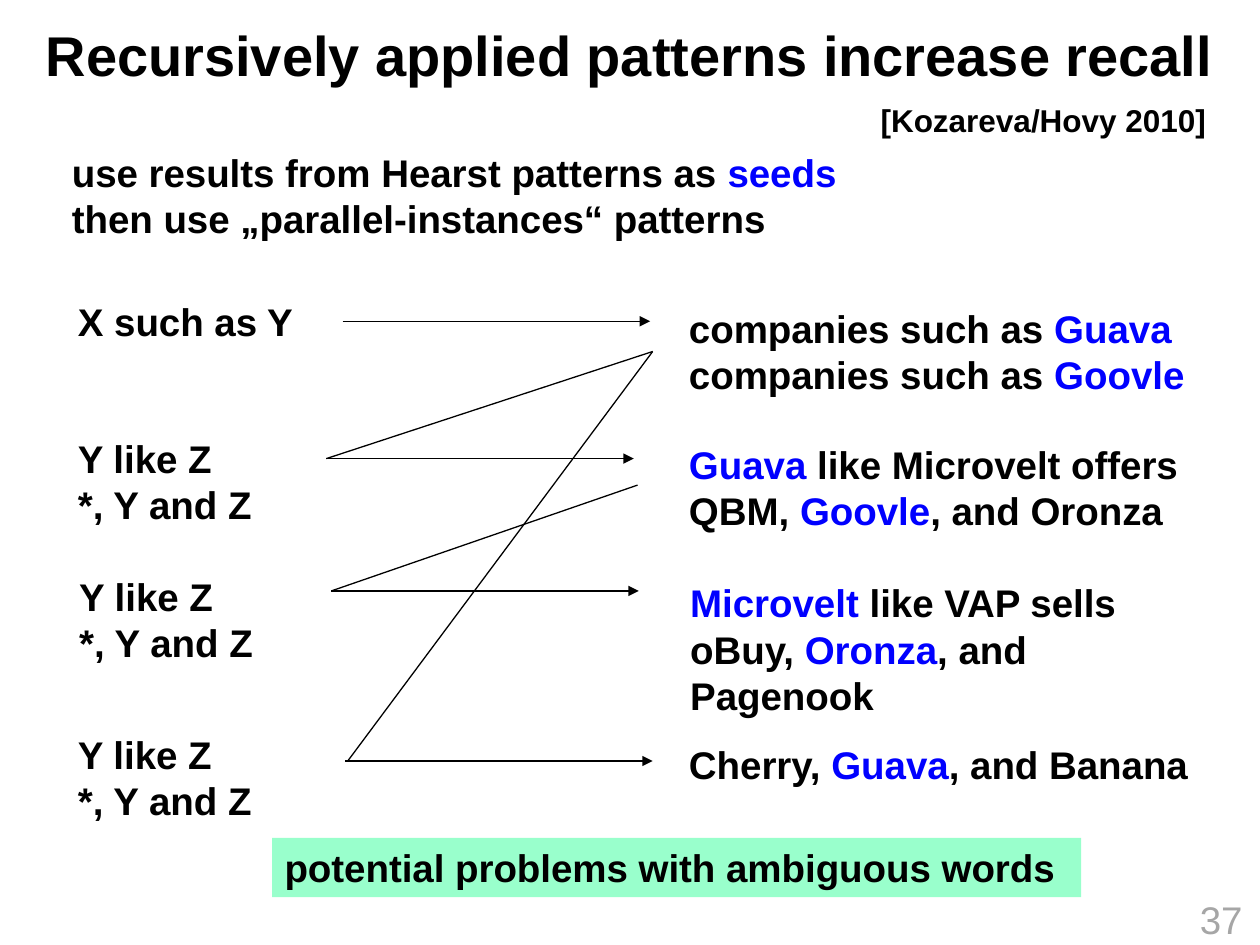
from dataclasses import dataclass

from lxml import etree
from pptx import Presentation
from pptx import util as u
from pptx.dml.color import RGBColor
from pptx.enum import shapes, text
from pptx.oxml.ns import qn


@dataclass(frozen=True)
class Theme:
    font: str = "Arial"
    ink: str = "000000"
    accent: str = "0000FF"
    panel: str = "99FFCC"
    muted: str = "A6A6A6"
    title_size: int = 32
    body_size: int = 22
    cite_size: int = 18
    line_width: float = 0.75


THEME = Theme()


def write(shape, content, size=THEME.body_size, color=THEME.ink, bold=True,
          align=text.PP_ALIGN.LEFT, anchor=text.MSO_ANCHOR.TOP, wrap=False,
          fit=text.MSO_AUTO_SIZE.NONE):
    """Fill a shape with lines of text; pieces between bars take the accent colour."""
    frame = shape.text_frame
    frame.word_wrap = wrap
    frame.auto_size = fit
    frame.vertical_anchor = anchor
    for number, line in enumerate(content.split("\n")):
        para = frame.add_paragraph() if number else frame.paragraphs[0]
        properties = para._p.get_or_add_pPr()
        properties.set("marL", "0")
        properties.set("indent", "0")
        etree.SubElement(properties, qn("a:buNone"))
        para.alignment = align
        para.space_before = u.Pt(0)
        for index, piece in enumerate(line.split("|")):
            if not piece:
                continue
            span = para.add_run()
            span.text = piece
            span.font.name = THEME.font
            span.font.size = u.Pt(size)
            span.font.bold = bold
            span.font.color.rgb = RGBColor.from_string(
                THEME.accent if index % 2 else color)


class Painter:
    """Holds the style and the current slide."""

    def __init__(self, page, theme):
        self.page = page
        self.theme = theme

    def placeholder(self, index, content, area, **style):
        box = self.page.placeholders[index]
        box.left, box.top, box.width, box.height = map(u.Inches, area)
        write(box, content, **style)

    def label(self, content, area, fit=text.MSO_AUTO_SIZE.SHAPE_TO_FIT_TEXT, **style):
        box = self.page.shapes.add_textbox(*map(u.Inches, area))
        write(box, content, fit=fit, **style)

    def panel(self, content, area):
        box = self.page.shapes.add_shape(
            shapes.MSO_SHAPE.RECTANGLE, *map(u.Inches, area))
        box.shadow.inherit = False
        box.fill.solid()
        box.fill.fore_color.rgb = RGBColor.from_string(self.theme.panel)
        box.line.fill.background()
        write(box, content, fit=text.MSO_AUTO_SIZE.SHAPE_TO_FIT_TEXT)

    def line(self, start, end, arrow=False):
        connector = self.page.shapes.add_connector(
            shapes.MSO_CONNECTOR.STRAIGHT, *map(u.Inches, (*start, *end)))
        connector.line.color.rgb = RGBColor.from_string(self.theme.ink)
        connector.line.width = u.Pt(self.theme.line_width)
        if arrow:
            etree.SubElement(connector.line._get_or_add_ln(),
                             qn("a:tailEnd"), type="triangle")
        etree.SubElement(connector._element.spPr, qn("a:effectLst"))


def main():
    deck = Presentation()
    deck.slide_width, deck.slide_height = u.Inches(10), u.Inches(7.5)
    page = deck.slides.add_slide(deck.slide_layouts[1])
    painter = Painter(page, THEME)

    # Heading, citation and introduction
    painter.placeholder(0, "Recursively applied patterns increase recall",
                        (0, 0, 10, 0.86), size=THEME.title_size, wrap=True,
                        align=text.PP_ALIGN.CENTER, anchor=text.MSO_ANCHOR.MIDDLE)
    painter.label("[Kozareva/Hovy 2010]", (6.89, 0.75, 2.81, 0.4),
                  size=THEME.cite_size)
    painter.placeholder(1, "use results from Hearst patterns as |seeds|\n"
                        "then use „parallel-instances“ patterns",
                        (0.47, 1.13, 6.38, 0.84))

    # Pattern rows: pattern, its left and top, matches, their left and top
    parallel = "Y like Z\n*, Y and Z"
    rows = [
        ("X such as Y", 0.52, 2.32,
         "companies such as |Guava|\ncompanies such as |Goovle|", 5.37, 2.37),
        (parallel, 0.52, 3.4,
         "|Guava |like Microvelt offers\nQBM, |Goovle|, and Oronza", 5.37, 3.45),
        (parallel, 0.53, 4.5,
         "|Microvelt |like VAP sells\noBuy, |Oronza|, and Pagenook", 5.38, 4.55),
        (parallel, 0.52, 5.75, "Cherry, |Guava|, and Banana", 5.37, 5.83),
    ]
    for pattern, left, top, matches, match_left, match_top in rows:
        for content, x, y, width in ((pattern, left, top, 1.93),
                                     (matches, match_left, match_top, 4.3)):
            height = 0.84 if "\n" in content else 0.47
            painter.label(content, (x, y, width, height))

    # Arrows from each pattern to its matches
    arrow_length = 2.44
    for x, y in ((2.72, 2.55), (2.59, 3.64), (2.63, 4.69), (2.74, 6.04)):
        painter.line((x, y), (x + arrow_length, y), arrow=True)

    # Lines that feed matches back into later patterns
    first_matches = (5.18, 2.79)
    painter.line(first_matches, (2.59, 3.64))
    painter.line((5.06, 3.85), (2.63, 4.69))
    painter.line(first_matches, (2.76, 6.04))

    # Conclusion and page number
    painter.panel("potential problems with ambiguous words",
                  (2.16, 6.65, 6.42, 0.47))
    painter.label("37", (9.41, 7.06, 0.55, 0.4), color=THEME.muted, bold=False,
                  align=text.PP_ALIGN.RIGHT, wrap=True,
                  fit=text.MSO_AUTO_SIZE.NONE)

    deck.save("out.pptx")


if __name__ == "__main__":
    main()
